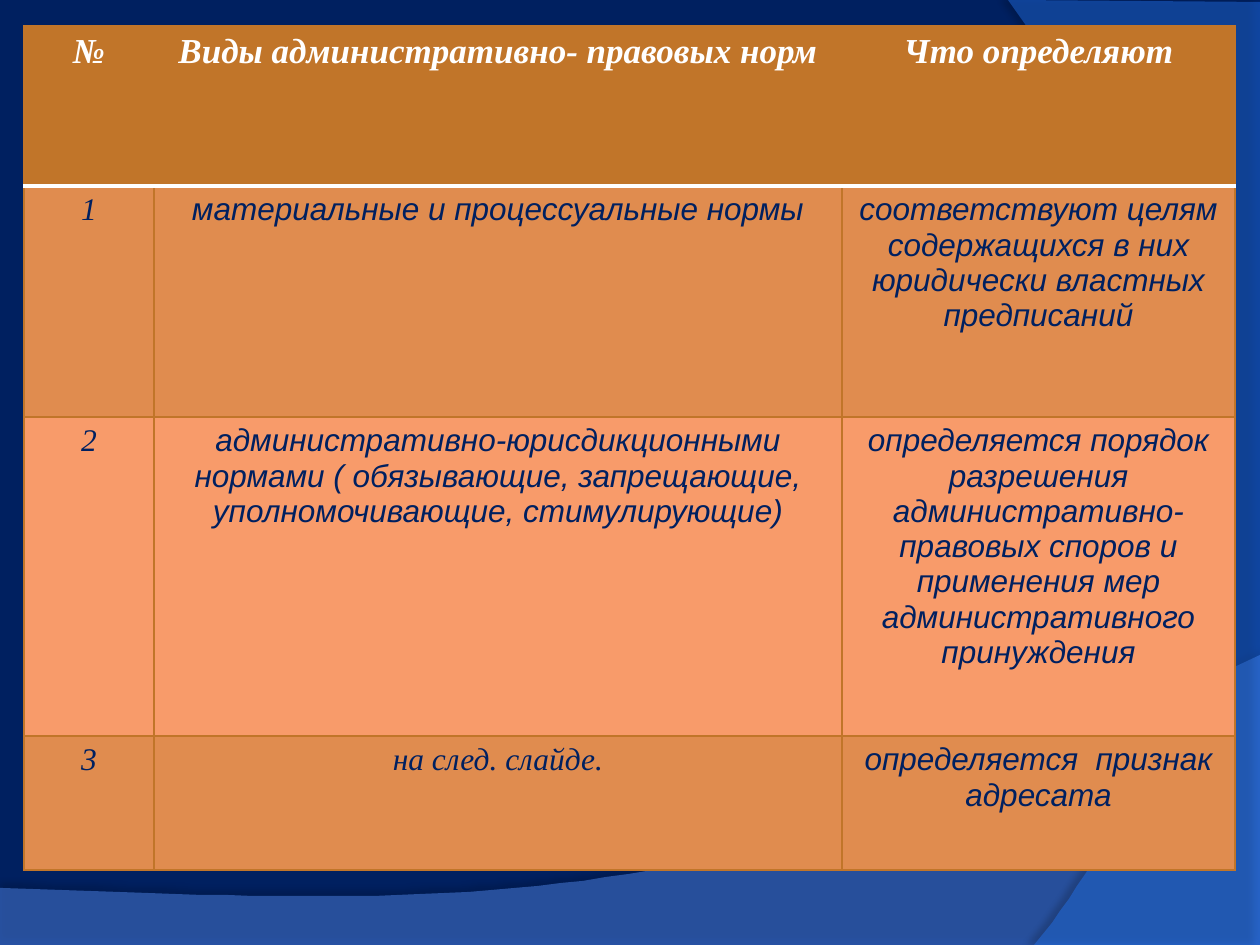
from lxml import etree
from pptx import Presentation
from pptx.dml.color import RGBColor
from pptx.enum.text import PP_ALIGN
from pptx.oxml.ns import qn
from pptx.util import Emu, Pt

EMU_PER_PX = 914400 / 126
PAGE_WIDTH, PAGE_HEIGHT = 1260, 945
BLANK_LAYOUT = 6
CENTER = PP_ALIGN.CENTER

NAVY = RGBColor(0x00, 0x20, 0x60)
BLACK = RGBColor(0x00, 0x00, 0x00)
WHITE = RGBColor(0xFF, 0xFF, 0xFF)
WAVE_BLUE = RGBColor(0x57, 0x90, 0xF7)
BRIGHT_BLUE = RGBColor(0x26, 0x7D, 0xFF)
BROWN = RGBColor(0xC1, 0x75, 0x29)
DARK_ORANGE = RGBColor(0xE0, 0x8C, 0x4F)
LIGHT_ORANGE = RGBColor(0xF8, 0x9B, 0x6A)

SERIF, SANS = "Times New Roman", "Arial"
HEADER_FONT = {"size": Pt(20), "bold": True, "italic": True}
BODY_FONT = {"size": Pt(18), "bold": False, "italic": True}

COLUMN_WIDTHS = [130, 688, 393]
ROW_HEIGHTS = [160, 231, 319, 134]
ROW_FILLS = [BROWN, DARK_ORANGE, LIGHT_ORANGE, DARK_ORANGE]
ROWS = [
    [("№", SERIF), ("Виды административно- правовых норм", SERIF),
     ("Что определяют", SERIF)],
    [("1", SERIF), ("материальные и процессуальные нормы", SANS),
     ("соответствуют целям содержащихся в них юридически властных "
      "предписаний", SANS)],
    [("2", SERIF),
     ("административно-юрисдикционными нормами ( обязывающие, запрещающие, "
      "уполномочивающие, стимулирующие)", SANS),
     ("определяется порядок разрешения административно-правовых споров и "
      "применения мер административного принуждения", SANS)],
    [("3", SERIF), ("на след. слайде.", SERIF),
     ("определяется  признак адресата", SANS)],
]


def px(length):
    return Emu(round(length * EMU_PER_PX))


def add_element(parent, tag, **attributes):
    element = etree.SubElement(parent, qn(tag))
    for name, value in attributes.items():
        element.set(name, str(value))
    return element


def bezier_points(start, first, second, end, steps=48):
    """Points along a cubic curve, both ends included."""
    points = []
    for step in range(steps + 1):
        t = step / steps
        weights = ((1 - t) ** 3, 3 * t * (1 - t) ** 2,
                   3 * t ** 2 * (1 - t), t ** 3)
        points.append(tuple(
            sum(weight * value for weight, value in zip(weights, axis))
            for axis in zip(start, first, second, end)))
    return points


def add_wave(page, points, color, opacity, shadow):
    """Translucent outline; shadow is opacity %, blur pt, distance pt, degrees."""
    builder = page.shapes.build_freeform(*points[0], scale=EMU_PER_PX)
    builder.add_line_segments(points[1:], close=True)
    wave = builder.convert_to_shape()
    wave.fill.solid()
    wave.fill.fore_color.rgb = color
    wave.line.fill.background()
    wave.shadow.inherit = False

    properties = wave.fill._xPr
    fill_color = properties.find(qn("a:solidFill")).find(qn("a:srgbClr"))
    add_element(fill_color, "a:alpha", val=opacity * 1000)
    shadow_opacity, blur, distance, angle = shadow
    outer = add_element(properties.find(qn("a:effectLst")), "a:outerShdw",
                        blurRad=Pt(blur), dist=Pt(distance),
                        dir=angle * 60000, rotWithShape=0)
    shadow_color = add_element(outer, "a:srgbClr", val=BLACK)
    add_element(shadow_color, "a:alpha", val=shadow_opacity * 1000)


def add_border(cell, side, color, width):
    line = add_element(cell._tc.get_or_add_tcPr(), f"a:ln{side}", w=Pt(width))
    add_element(add_element(line, "a:solidFill"), "a:srgbClr", val=color)


def format_cell(cell, row, text, font_name):
    for side in "LRTB":
        under_header = (row, side) in ((0, "B"), (1, "T"))
        color, width = (WHITE, 2) if under_header else (BROWN, 0.79)
        add_border(cell, side, color, width)
    cell.fill.solid()
    cell.fill.fore_color.rgb = ROW_FILLS[row]

    para = cell.text_frame.paragraphs[0]
    para.alignment = CENTER
    span = para.add_run()
    span.text = text
    font_format = HEADER_FONT if row == 0 else BODY_FONT
    for name, value in {**font_format, "name": font_name}.items():
        setattr(span.font, name, value)
    span.font.color.rgb = WHITE if row == 0 else NAVY


def add_norms_table(page, left, top):
    frame = page.shapes.add_table(
        len(ROWS), len(COLUMN_WIDTHS), px(left), px(top),
        px(sum(COLUMN_WIDTHS)), px(sum(ROW_HEIGHTS)))
    table = frame.table
    table.horz_banding = False
    for column, width in zip(table.columns, COLUMN_WIDTHS):
        column.width = px(width)
    for row, height in enumerate(ROW_HEIGHTS):
        table.rows[row].height = px(height)
        for column, (text, font_name) in enumerate(ROWS[row]):
            format_cell(table.cell(row, column), row, text, font_name)


def main():
    deck = Presentation()
    deck.slide_width, deck.slide_height = px(PAGE_WIDTH), px(PAGE_HEIGHT)
    page = deck.slides.add_slide(deck.slide_layouts[BLANK_LAYOUT])
    page.background.fill.solid()
    page.background.fill.fore_color.rgb = NAVY

    bottom_curve = bezier_points((1260, 655), (704, 919), (493, 906), (0, 888))
    add_wave(page, [(0, 946), (1260, 946)] + bottom_curve,
             WAVE_BLUE, 45, (35, 4, 3.5, 270))
    right_curve = bezier_points((1034, 945), (1178, 780), (1283, 378), (1008, 0))
    add_wave(page, [(1260, 2), (1260, 945)] + right_curve,
             BRIGHT_BLUE, 40, (45, 4, 4, 180))
    add_norms_table(page, 24, 26)
    deck.save("out.pptx")


if __name__ == "__main__":
    main()
